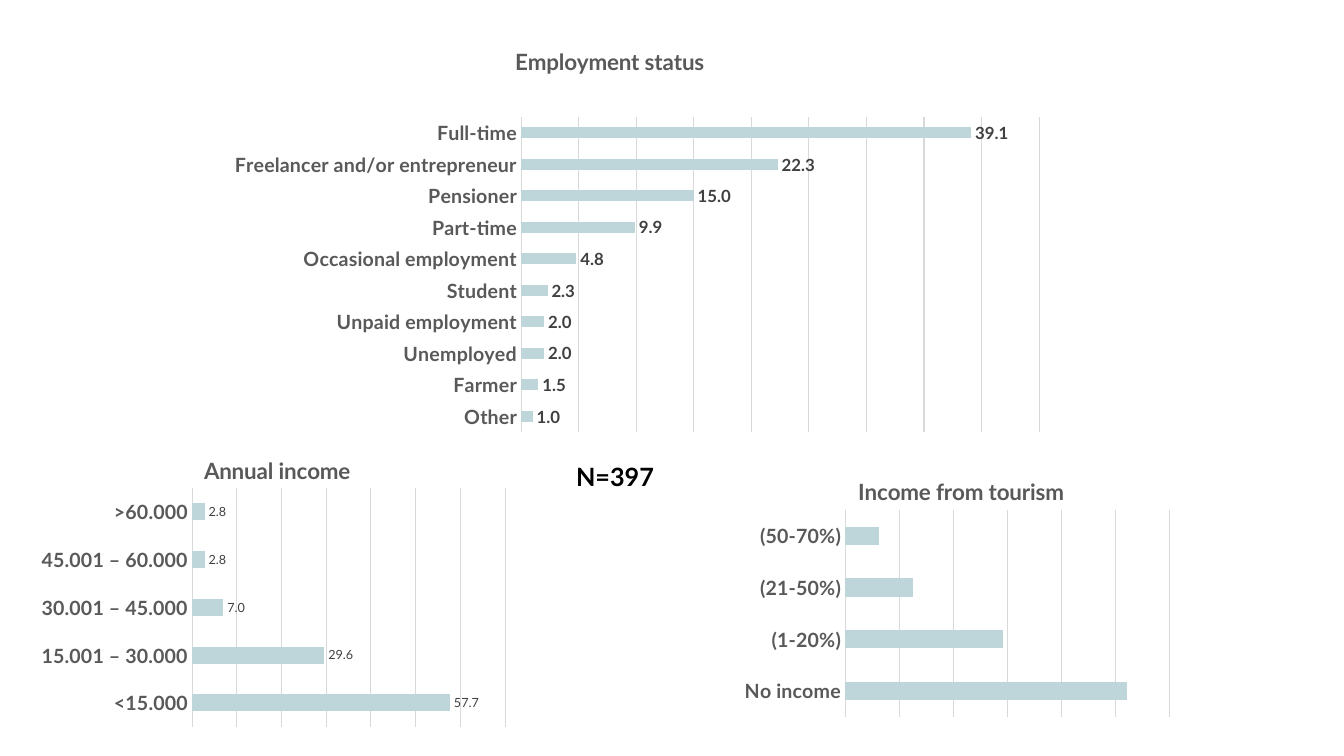
import pptx
import pptx.chart.data
import pptx.dml.color
import pptx.enum.chart
import pptx.enum.text
import pptx.oxml
import pptx.oxml.ns
import pptx.util

PX = 9071
FONT = "Lato"
BAR, GRID, GREY, DARK, BLACK = "BED6DA", "D9D9D9", "595959", "404040", "000000"
NUMBER_FORMAT = "###0.0"
SAMPLE = {"text": "N=397", "box": (566, 456, 105, 40)}
CHARTS = [
    {
        "title": "Employment status",
        "box": (139, 20, 931, 434),
        "title_at": (511, 42),
        "plot": (521, 117, 518, 315),
        "maximum": 45,
        "steps": 9,
        "labels": (12, True),
        "values": [
            ("Other", 1.0), ("Farmer", 1.5), ("Unemployed", 2.0),
            ("Unpaid employment", 2.0), ("Student", 2.3),
            ("Occasional employment", 4.8), ("Part-time", 9.9),
            ("Pensioner", 15.0), ("Freelancer and/or entrepreneur", 22.3),
            ("Full-time", 39.1),
        ],
    },
    {
        "title": "Annual income",
        "box": (32, 434, 483, 298),
        "title_at": (200, 451),
        "plot": (192, 488, 313, 239),
        "maximum": 70,
        "steps": 7,
        "labels": (9, False),
        "values": [
            ("<15.000", 57.7), ("15.001 – 30.000", 29.6),
            ("30.001 – 45.000", 7.0), ("45.001 – 60.000", 2.8),
            (">60.000", 2.8),
        ],
    },
    {
        "title": "Income from tourism",
        "box": (736, 455, 443, 268),
        "title_at": (854, 472),
        "plot": (845, 510, 324, 207),
        "maximum": 115,
        "steps": 6,
        "labels": None,
        "values": [
            ("No income", 100), ("(1-20%)", 56), ("(21-50%)", 24), ("(50-70%)", 12),
        ],
    },
]


def color(value):
    return pptx.dml.color.RGBColor.from_string(value)


def emu(box):
    return [length * PX for length in box]


def style_font(font, size, value, bold=False):
    font.name = FONT
    font.size = pptx.util.Pt(size)
    font.bold = bold
    font.color.rgb = color(value)


def style_line(line):
    line.color.rgb = color(GRID)
    line.width = pptx.util.Pt(0.75)


def place(parent, index, box, area, target=""):
    for old in parent.findall(pptx.oxml.ns.qn("c:layout")):
        parent.remove(old)
    left, top, width, height = area
    fractions = [(box[0] - left) / width, (box[1] - top) / height]
    fractions += [box[2] / width, box[3] / height] if len(box) == 4 else []
    modes = '<c:xMode val="edge"/><c:yMode val="edge"/>'
    sizes = "".join(f'<c:{name} val="{part:.4f}"/>' for name, part in zip("xywh", fractions))
    parent.insert(index, pptx.oxml.parse_xml(
        f'<c:layout {pptx.oxml.ns.nsdecls("c")}><c:manualLayout>'
        f"{target}{modes}{sizes}</c:manualLayout></c:layout>"))


def add_bar_chart(slide, content):
    data = pptx.chart.data.CategoryChartData(number_format=NUMBER_FORMAT)
    data.categories = [name for name, value in content["values"]]
    data.add_series("Series 1", [value for name, value in content["values"]])
    chart = slide.shapes.add_chart(
        pptx.enum.chart.XL_CHART_TYPE.BAR_CLUSTERED, *emu(content["box"]), data).chart
    style_font(chart.font, 10, BLACK)
    chart.has_legend = False

    chart.has_title = True
    title = chart.chart_title
    run = title.text_frame.paragraphs[0].add_run()
    run.text = content["title"]
    style_font(run.font, 16, GREY, True)
    title.include_in_layout = False
    place(title._element, 1, content["title_at"], content["box"])

    plot_area = chart._chartSpace.chart.plotArea
    place(plot_area, 0, content["plot"], content["box"], '<c:layoutTarget val="inner"/>')

    none = pptx.enum.chart.XL_TICK_MARK.NONE
    categories = chart.category_axis
    categories.major_tick_mark = categories.minor_tick_mark = none
    categories.has_major_gridlines = False
    style_font(categories.tick_labels.font, 14, GREY, True)
    style_line(categories.format.line)

    scale = chart.value_axis
    scale.visible = False
    scale.minimum_scale = 0
    scale.maximum_scale = content["maximum"]
    scale.major_unit = content["maximum"] / content["steps"]
    scale.has_major_gridlines = True
    style_line(scale.major_gridlines.format.line)

    plot = chart.plots[0]
    plot.gap_width = 182
    plot.vary_by_categories = False
    fill = plot.series[0].format.fill
    fill.solid()
    fill.fore_color.rgb = color(BAR)
    if content["labels"]:
        size, bold = content["labels"]
        plot.has_data_labels = True
        labels = plot.data_labels
        labels.show_value = True
        labels.number_format = NUMBER_FORMAT
        labels.number_format_is_linked = False
        labels.position = pptx.enum.chart.XL_LABEL_POSITION.OUTSIDE_END
        style_font(labels.font, size, DARK, bold)


def add_sample_size(slide):
    frame = slide.shapes.add_textbox(*emu(SAMPLE["box"])).text_frame
    frame.word_wrap = True
    frame.auto_size = pptx.enum.text.MSO_AUTO_SIZE.SHAPE_TO_FIT_TEXT
    run = frame.paragraphs[0].add_run()
    run.text = SAMPLE["text"]
    style_font(run.font, 18, BLACK, True)


def main():
    presentation = pptx.Presentation()
    presentation.slide_width = pptx.util.Inches(13.33)
    presentation.slide_height = pptx.util.Inches(7.5)
    slide = presentation.slides.add_slide(presentation.slide_layouts[6])
    add_sample_size(slide)
    for content in CHARTS:
        add_bar_chart(slide, content)
    presentation.save("out.pptx")


if __name__ == "__main__":
    main()
